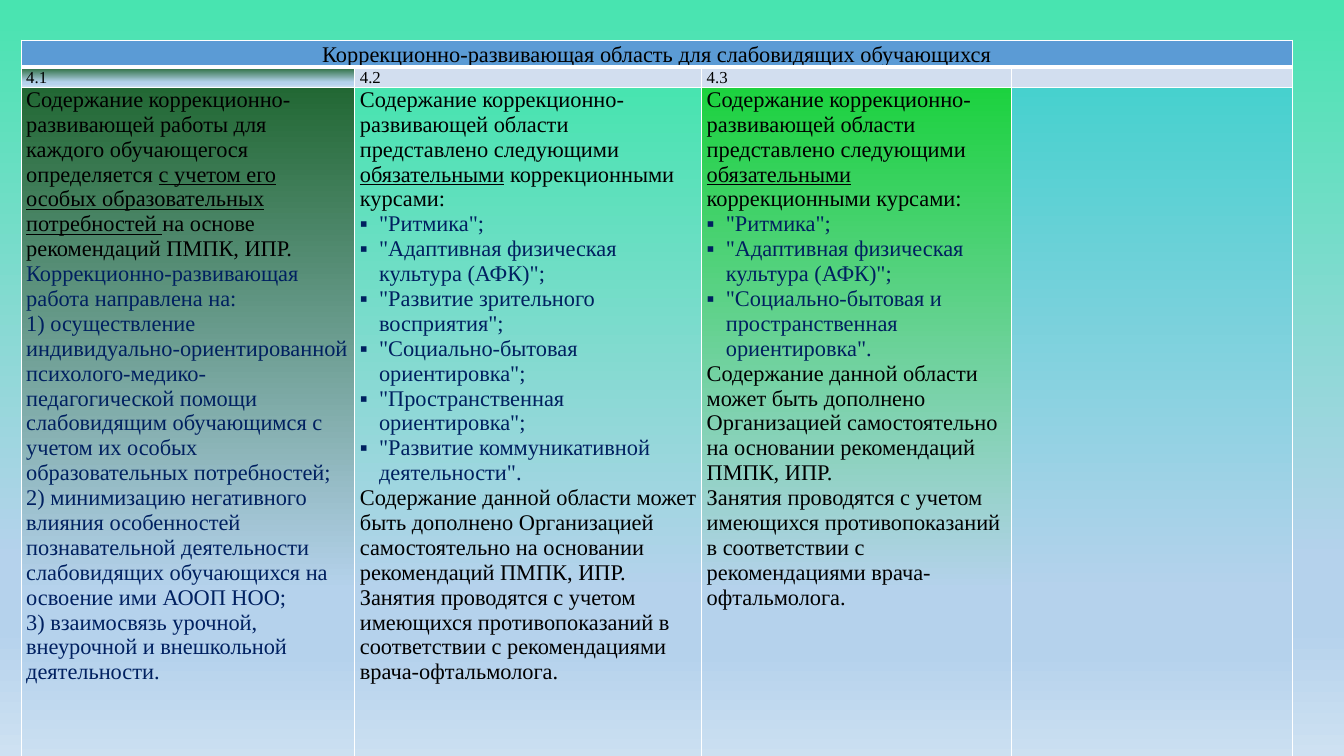
from lxml import etree
from pptx import Presentation
from pptx.dml.color import RGBColor
from pptx.enum.text import PP_ALIGN
from pptx.oxml.ns import qn
from pptx.util import Inches, Pt

CENTER, LEFT = PP_ALIGN.CENTER, PP_ALIGN.LEFT
BLACK = RGBColor(0x00, 0x00, 0x00)
WHITE = RGBColor(0xFF, 0xFF, 0xFF)
NAVY = RGBColor(0x00, 0x20, 0x60)
BLUE = RGBColor(0x5B, 0x9B, 0xD5)
PALE = RGBColor(0xD2, 0xDE, 0xEF)
SKY = RGBColor(0xB5, 0xD2, 0xEC)
MIST = RGBColor(0xCE, 0xE1, 0xF2)
MINT = RGBColor(0x48, 0xE4, 0xB0)
FOREST = RGBColor(0x22, 0x68, 0x34)
GREEN = RGBColor(0x1C, 0xD2, 0x3F)
TURQUOISE = RGBColor(0x47, 0xD1, 0xCE)

FONT = "Times New Roman"
COLUMNS = [3.31, 3.44, 3.07, 2.79]
ROWS = [0.14, 0.14, 6.75]
INDENT = Inches(0.19)

TITLE = "Коррекционно-развивающая область для слабовидящих обучающихся"
NUMBERS = ["4.1", "4.2", "4.3", ""]
NUMBER_FILLS = [FOREST, PALE, PALE, PALE]
BODY_FILLS = [FOREST, MINT, GREEN, TURQUOISE]

NEEDS = [
    "Содержание коррекционно-развивающей работы для каждого обучающегося определяется "
    "|с учетом его особых образовательных потребностей |на основе рекомендаций ПМПК, ИПР.",
]
AIMS = [
    "Коррекционно-развивающая работа направлена на:",
    "1) осуществление индивидуально-ориентированной психолого-медико-педагогической помощи "
    "слабовидящим обучающимся с учетом их особых образовательных потребностей;",
    "2) минимизацию негативного влияния особенностей познавательной деятельности "
    "слабовидящих обучающихся на освоение ими АООП НОО;",
    "3) взаимосвязь урочной, внеурочной и внешкольной деятельности.",
]
COURSES_INTRO = [
    "Содержание коррекционно-развивающей области представлено следующими "
    "|обязательными| коррекционными курсами:",
]
COMMON_COURSES = ['"Ритмика";', '"Адаптивная физическая культура (АФК)";']
COURSES_42 = COMMON_COURSES + [
    '"Развитие зрительного восприятия";',
    '"Социально-бытовая ориентировка";',
    '"Пространственная ориентировка";',
    '"Развитие коммуникативной деятельности".',
]
COURSES_43 = COMMON_COURSES + ['"Социально-бытовая и пространственная ориентировка".']
CLOSING = [
    "Содержание данной области может быть дополнено Организацией самостоятельно "
    "на основании рекомендаций ПМПК, ИПР.",
    "Занятия проводятся с учетом имеющихся противопоказаний в соответствии "
    "с рекомендациями врача-офтальмолога.",
]


def block(lines, **style):
    return [(line, style) for line in lines]


def course_list(courses):
    return block(COURSES_INTRO) + block(courses, color=NAVY, bullet=True) + block(CLOSING)


BODIES = [
    block(NEEDS) + block(AIMS, color=NAVY),
    course_list(COURSES_42),
    course_list(COURSES_43),
    [],
]


def fade(fill, parent, top):
    fill.gradient()
    fill.gradient_angle = 270
    stops = next(parent.iter(qn("a:gsLst")))
    for stop in list(stops):
        stops.remove(stop)
    for pos, color in [(0, top), (74, SKY), (83, SKY), (100, MIST)]:
        gs = etree.SubElement(stops, qn("a:gs"), pos=str(pos * 1000))
        etree.SubElement(gs, qn("a:srgbClr"), val=str(color))


def add_borders(cell, **widths):
    tcPr = cell._tc.get_or_add_tcPr()
    for i, side in enumerate(["lnL", "lnR", "lnT", "lnB"]):
        ln = etree.Element(qn("a:" + side), w=str(Pt(widths.get(side, 1))))
        fill = etree.SubElement(ln, qn("a:solidFill"))
        etree.SubElement(fill, qn("a:srgbClr"), val=str(WHITE))
        tcPr.insert(i, ln)


def write(p, text, size=16, color=BLACK, align=LEFT, spacing=1.0, bullet=False):
    p.alignment = align
    p.line_spacing = spacing
    if bullet:
        pPr = p._p.get_or_add_pPr()
        pPr.set("marL", str(INDENT))
        pPr.set("indent", str(-INDENT))
        etree.SubElement(pPr, qn("a:buFont"), typeface=FONT)
        etree.SubElement(pPr, qn("a:buChar"), char="▪")
    for i, part in enumerate(text.split("|") if text else []):
        r = p.add_run()
        r.text = part
        r.font.name = FONT
        r.font.size = Pt(size)
        r.font.color.rgb = color
        r.font.underline = i % 2 == 1
    p._p.get_or_add_endParaRPr().set("sz", str(size * 100))


def fill_cell(cell, paragraphs, color, solid=False, **borders):
    cell.margin_left = cell.margin_right = Inches(0.05)
    cell.margin_top = cell.margin_bottom = 0
    if solid:
        cell.fill.solid()
        cell.fill.fore_color.rgb = color
    else:
        fade(cell.fill, cell._tc, color)
    add_borders(cell, **borders)
    tf = cell.text_frame
    for i, (text, style) in enumerate(paragraphs or block([""], size=12)):
        write(tf.add_paragraph() if i else tf.paragraphs[0], text, **style)


def add_area_table(slide, left, top, width, height):
    frame = slide.shapes.add_table(len(ROWS), len(COLUMNS), left, top, width, height)
    table = frame.table
    table.first_row = table.horz_banding = False
    for column, share in zip(table.columns, COLUMNS):
        column.width = int(width * share / sum(COLUMNS))
    for row, size in zip(table.rows, ROWS):
        row.height = Inches(size)
    table.cell(0, 0).merge(table.cell(0, len(COLUMNS) - 1))
    for c in range(len(COLUMNS)):
        title = block([TITLE], align=CENTER, spacing=1.07) if c == 0 else []
        number = block([NUMBERS[c]], size=12, spacing=1.07)
        fill_cell(table.cell(0, c), title, BLUE, solid=True, lnB=3)
        fill_cell(table.cell(1, c), number, NUMBER_FILLS[c],
                  solid=NUMBER_FILLS[c] == PALE, lnT=3)
        fill_cell(table.cell(2, c), BODIES[c], BODY_FILLS[c])


def main():
    prs = Presentation()
    prs.slide_width, prs.slide_height = Inches(13.33), Inches(7.5)
    slide = prs.slides.add_slide(prs.slide_layouts[6])
    fade(slide.background.fill, slide._element, MINT)
    add_area_table(slide, Inches(0.21), Inches(0.4), Inches(12.61), Inches(sum(ROWS)))
    prs.save("out.pptx")


if __name__ == "__main__":
    main()
